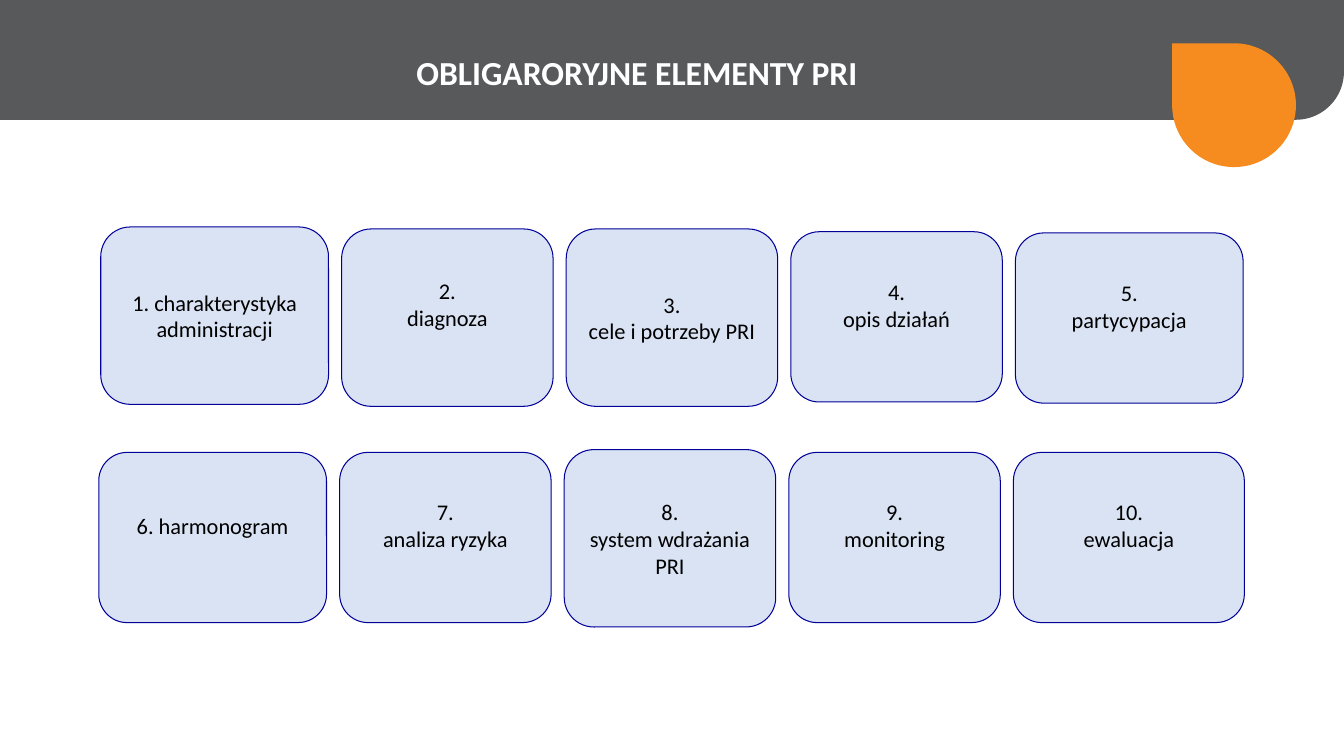
from dataclasses import dataclass

from pptx import Presentation
from pptx import util as u
from pptx.dml.color import RGBColor
from pptx.enum import shapes, text


@dataclass(frozen=True)
class Theme:
    font: str = "Calibri"
    title_size: int = 24
    box_size: int = 16
    band: str = "58595B"
    accent: str = "F68B1F"
    box_fill: str = "DAE3F3"
    box_line: str = "000099"
    title_text: str = "FFFFFF"
    box_text: str = "000000"


class SlideBuilder:
    def __init__(self, prs, theme):
        self.theme = theme
        self.slide = prs.slides.add_slide(prs.slide_layouts[5])

    def shape(self, kind, left, top, width, height, fill):
        sp = self.slide.shapes.add_shape(
            kind, u.Cm(left), u.Cm(top), u.Cm(width), u.Cm(height))
        sp.shadow.inherit = False
        sp.fill.solid()
        sp.fill.fore_color.rgb = RGBColor.from_string(fill)
        sp.line.fill.background()
        return sp

    def set_text(self, sp, content, size, color, align, bold=False):
        tf = sp.text_frame
        tf.text = content
        tf.word_wrap = True
        tf.auto_size = text.MSO_AUTO_SIZE.NONE
        tf.vertical_anchor = text.MSO_ANCHOR.MIDDLE
        for p in tf.paragraphs:
            p.alignment = align
            p.font.name = self.theme.font
            p.font.size = u.Pt(size)
            p.font.bold = bold
            p.font.color.rgb = RGBColor.from_string(color)

    def header(self):
        band = self.shape(shapes.MSO_SHAPE.ROUND_1_RECTANGLE,
                          0, -0.05, 33.87, 3.07, self.theme.band)
        band.adjustments[0] = 0.395
        band._element.spPr.xfrm.set("flipV", "1")
        drop = self.shape(shapes.MSO_SHAPE.TEAR,
                          29.54, 1.09, 3.12, 3.12, self.theme.accent)
        drop.rotation = 270

    def title(self, content):
        """Fill the title placeholder and bring it in front of the band."""
        sp = self.slide.shapes.title
        sp.left, sp.top = u.Cm(10.24), u.Cm(1.17)
        sp.width, sp.height = u.Cm(23.37), u.Cm(1.27)
        self.set_text(sp, content, self.theme.title_size,
                      self.theme.title_text, text.PP_ALIGN.LEFT, bold=True)
        self.slide.shapes._spTree.append(sp._element)

    def box(self, content, left, top, width, height, lift):
        """Add a rounded box; lift is extra space below its centred text."""
        sp = self.shape(shapes.MSO_SHAPE.ROUNDED_RECTANGLE,
                        left, top, width, height, self.theme.box_fill)
        sp.line.color.rgb = RGBColor.from_string(self.theme.box_line)
        sp.line.width = u.Pt(0.75)
        self.set_text(sp, content, self.theme.box_size, self.theme.box_text,
                      text.PP_ALIGN.CENTER)
        sp.text_frame.margin_bottom = u.Cm(0.13 + lift)


TALL, LOW = 4.47, 4.29
WIDE, NARROW = 5.74, 5.33
GAP = 0.33

# Each row: left edge, then (text, top, width, height, lift) per box.
ROWS = [
    (2.54, [
        ("1. charakterystyka administracji", 5.72, WIDE, TALL, 0),
        ("2.\ndiagnoza", 5.77, NARROW, TALL, 0.69),
        ("3.\ncele i potrzeby PRI", 5.77, NARROW, TALL, 0),
        ("4.\nopis działań", 5.84, NARROW, LOW, 0.6),
        ("5.\npartycypacja", 5.87, WIDE, LOW, 0.6),
    ]),
    (2.49, [
        ("6. harmonogram", 11.4, WIDE, LOW, 0.6),
        ("7.\nanaliza ryzyka", 11.4, NARROW, LOW, 0.6),
        ("8.\nsystem wdrażania PRI", 11.33, NARROW, TALL, 0),
        ("9.\nmonitoring", 11.4, NARROW, LOW, 0.6),
        ("10.\newaluacja", 11.4, 5.82, LOW, 0.6),
    ]),
]


def main():
    prs = Presentation()
    prs.slide_width, prs.slide_height = u.Cm(33.87), u.Cm(19.05)
    builder = SlideBuilder(prs, Theme())
    builder.header()
    builder.title("OBLIGARORYJNE ELEMENTY PRI")
    for left, boxes in ROWS:
        for content, top, width, height, lift in boxes:
            builder.box(content, left, top, width, height, lift)
            left += width + GAP
    prs.save("out.pptx")


if __name__ == "__main__":
    main()
